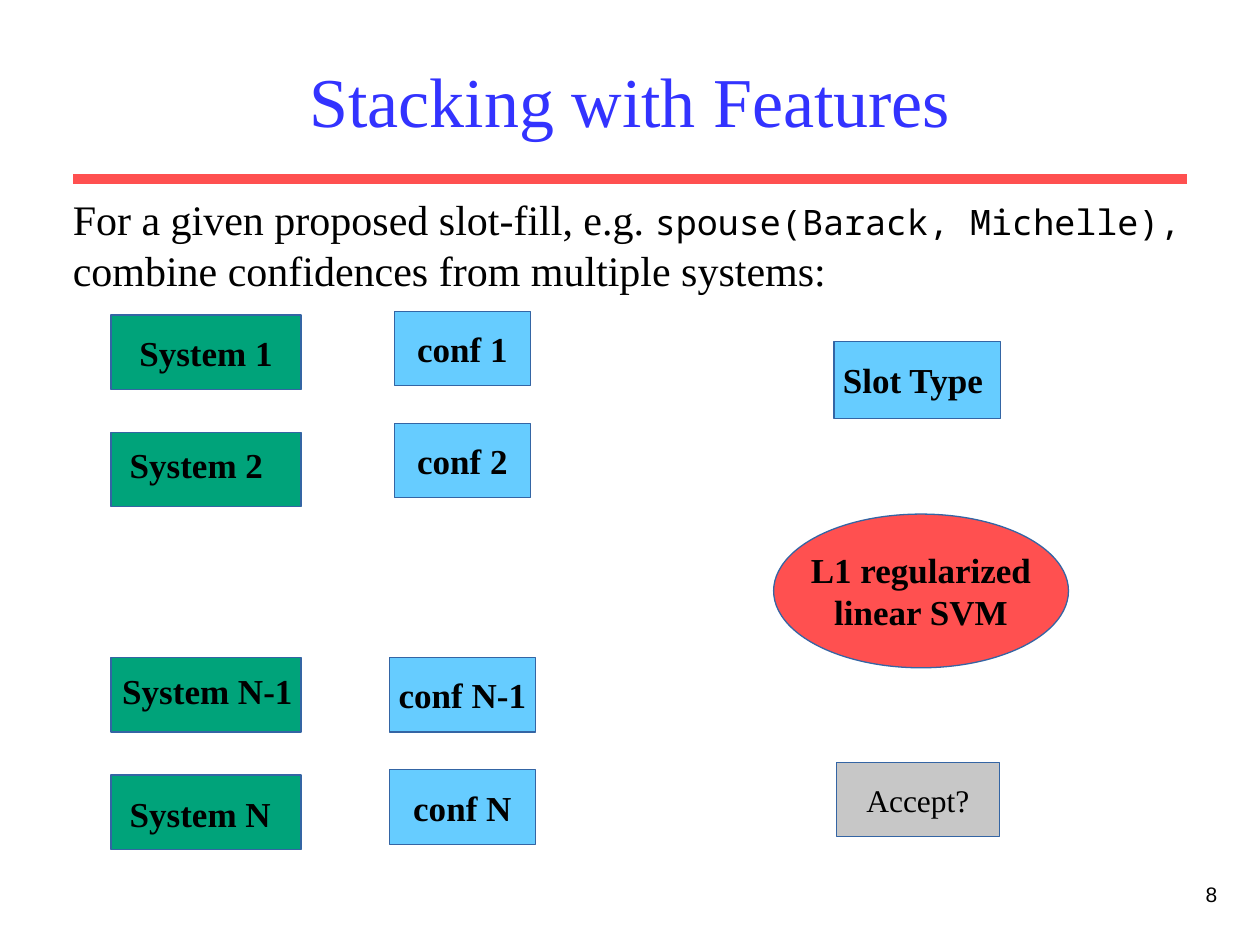
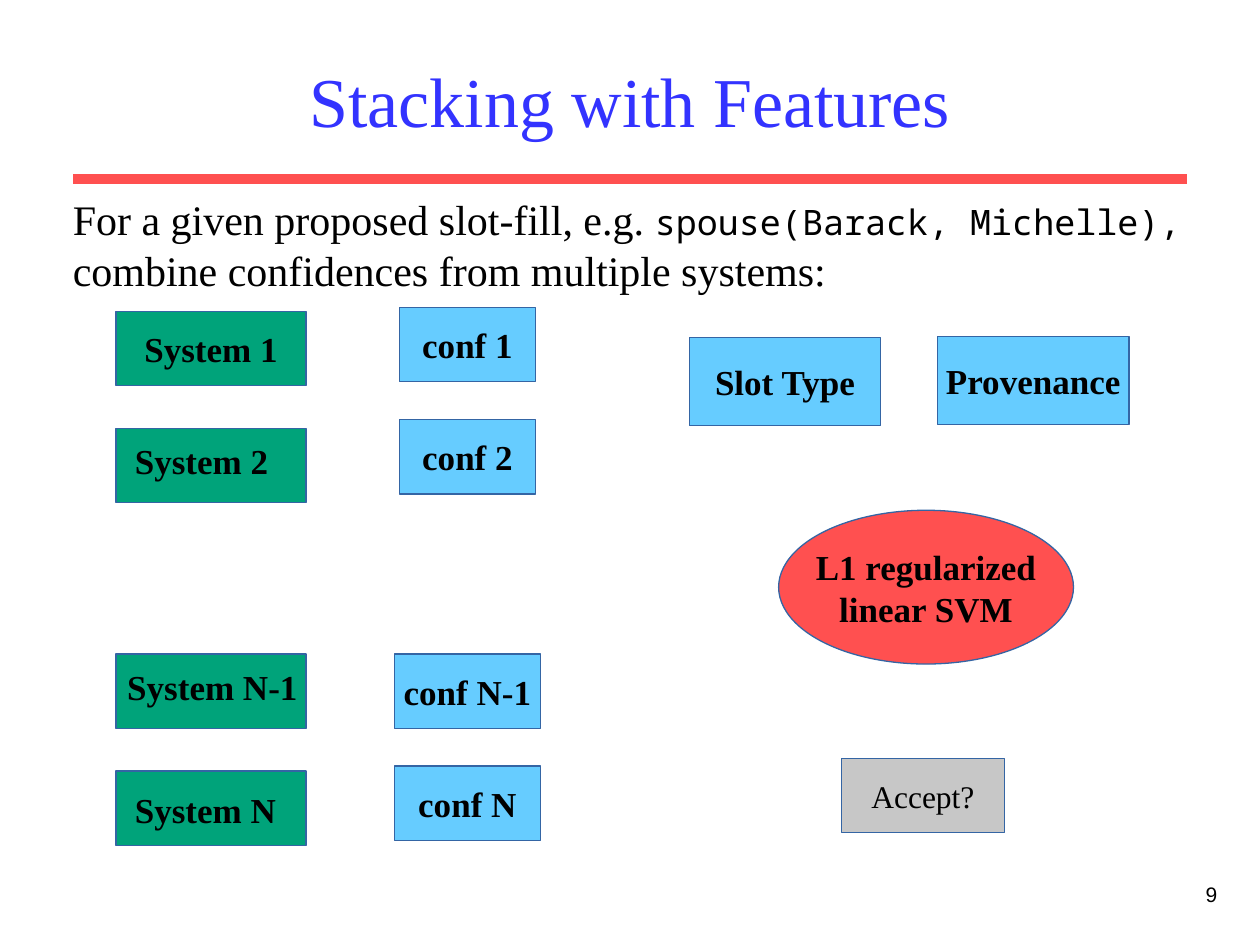
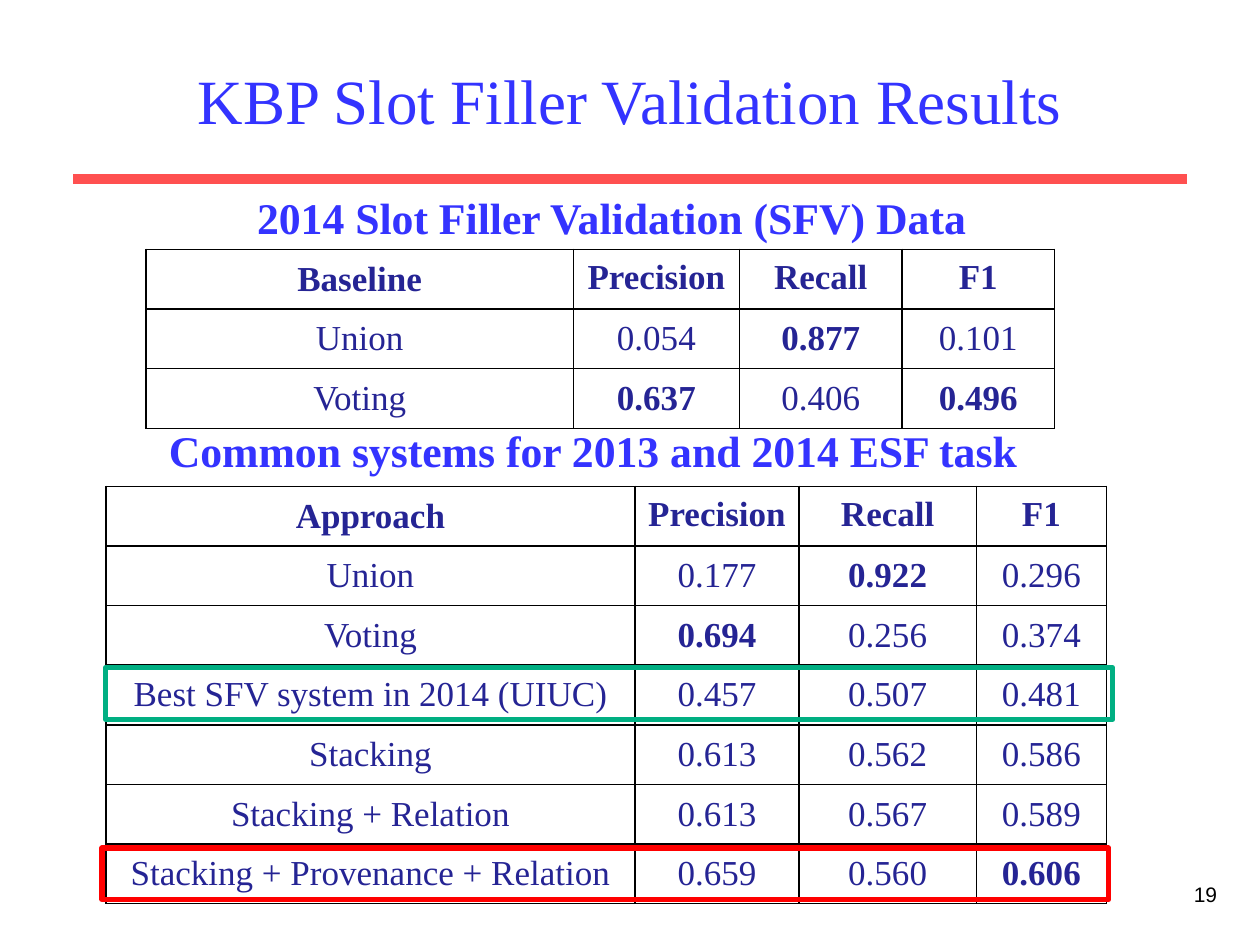
"""Builds three slides on stacking with features and slot filler validation."""
import dataclasses
import typing

import lxml.etree
import pptx
import pptx.dml.color
import pptx.enum.shapes
import pptx.enum.text
import pptx.oxml.ns
import pptx.util

Inches = pptx.util.Inches
Pt = pptx.util.Pt
ALIGN = pptx.enum.text.PP_ALIGN
ANCHOR = pptx.enum.text.MSO_ANCHOR
SHAPE = pptx.enum.shapes.MSO_SHAPE

COLORS = {
    "title": "3333FF",
    "heading": "3433FF",
    "rule": "FF5050",
    "text": "000000",
    "cell": "252494",
    "border": "000000",
    "outline": "3465A4",
    "system": "00A37A",
    "feature": "66CCFF",
    "classifier": "FF5050",
    "decision": "C7C7C7",
    "best_sfv": "00AF82",
    "best_stacking": "FF0000",
}
SERIF = "Times New Roman"
FORMATS = {
    "title": {"name": SERIF, "size": Pt(40)},
    "long_title": {"name": SERIF, "size": Pt(36)},
    "heading": {"name": SERIF, "size": Pt(25), "bold": True},
    "intro": {"name": SERIF, "size": Pt(24)},
    "code": {"name": "Noto Sans Mono", "size": Pt(20)},
    "label": {"name": SERIF, "size": Pt(20), "bold": True},
    "decision": {"name": SERIF, "size": Pt(18)},
    "number": {"name": "Arial", "size": Pt(12)},
    "cell": {"name": SERIF, "size": Pt(20), "bold": False},
    "strong_cell": {"name": SERIF, "size": Pt(20), "bold": True},
}
MARGINS = ("margin_left", "margin_top", "margin_right", "margin_bottom")


@dataclasses.dataclass
class Text:
    left: float
    top: float
    width: float
    height: float
    text: str
    fmt: str
    color: str = "text"
    align: typing.Any = ALIGN.LEFT
    anchor: typing.Any = ANCHOR.TOP


@dataclasses.dataclass
class Box:
    left: float
    top: float
    width: float
    height: float
    fill: str
    text: str = ""
    fmt: str = "label"
    shape: typing.Any = SHAPE.RECTANGLE
    align: typing.Any = ALIGN.CENTER
    inset: float = 0
    wrap: bool = True


@dataclasses.dataclass
class Results:
    left: float
    top: float
    height: float
    widths: tuple[float, ...]
    rows: list[tuple[str, ...]]


def set_all(obj: typing.Any, values: dict[str, typing.Any]) -> None:
    for name, value in values.items():
        setattr(obj, name, value)


def rgb(color: str) -> pptx.dml.color.RGBColor:
    return pptx.dml.color.RGBColor.from_string(COLORS[color])


def add_run(p: typing.Any, text: str, fmt: str, color: str = "text") -> None:
    r = p.add_run()
    r.text = text
    set_all(r.font, FORMATS[fmt])
    r.font.color.rgb = rgb(color)


def place(item: typing.Any, dx: float = 0, dy: float = 0) -> list[int]:
    return [Inches(v) for v in (item.left + dx, item.top + dy, item.width, item.height)]


def add_text(s: typing.Any, item: Text) -> None:
    tf = s.shapes.add_textbox(*place(item)).text_frame
    set_all(tf, dict.fromkeys(MARGINS, 0) | {"word_wrap": True, "vertical_anchor": item.anchor})
    p = tf.paragraphs[0]
    p.alignment = item.align
    add_run(p, item.text, item.fmt, item.color)


def add_box(s: typing.Any, box: Box, dx: float = 0, dy: float = 0) -> None:
    sp = s.shapes.add_shape(box.shape, *place(box, dx, dy))
    sp.shadow.inherit = False
    sp.fill.solid()
    sp.fill.fore_color.rgb = rgb(box.fill)
    sp.line.color.rgb = rgb("outline")
    sp.line.width = Pt(0.75)
    if box.text:
        tf = sp.text_frame
        set_all(tf, dict.fromkeys(MARGINS, 0) | {"word_wrap": box.wrap, "vertical_anchor": ANCHOR.MIDDLE})
        tf.margin_left = Inches(box.inset)
        p = tf.paragraphs[0]
        p.alignment = box.align
        for i, line in enumerate(box.text.split("\n")):
            if i:
                p.add_line_break()
            add_run(p, line, box.fmt)


def add_frame(s: typing.Any, left: float, top: float, color: str) -> None:
    sp = s.shapes.add_shape(SHAPE.RECTANGLE, Inches(left), Inches(top), Inches(7.99), Inches(0.41))
    sp.shadow.inherit = False
    sp.fill.background()
    sp.line.color.rgb = rgb(color)
    sp.line.width = Pt(3)


def add_borders(cell: typing.Any) -> None:
    qn = pptx.oxml.ns.qn
    tc_pr = cell._tc.get_or_add_tcPr()
    for side in ("a:lnL", "a:lnR", "a:lnT", "a:lnB"):
        ln = lxml.etree.SubElement(tc_pr, qn(side), w=str(Pt(1)))
        fill = lxml.etree.SubElement(ln, qn("a:solidFill"))
        lxml.etree.SubElement(fill, qn("a:srgbClr"), val=COLORS["border"])


def add_results(s: typing.Any, res: Results) -> None:
    header, *body = res.rows
    best = [max(column) for column in zip(*body)]
    table = s.shapes.add_table(
        len(res.rows), len(header), Inches(res.left), Inches(res.top),
        Inches(sum(res.widths)), Inches(res.height)).table
    set_all(table, {"first_row": False, "horz_banding": False})
    for column, width in zip(table.columns, res.widths):
        column.width = Inches(width)
    for i, row in enumerate(res.rows):
        for j, value in enumerate(row):
            cell = table.cell(i, j)
            add_borders(cell)
            cell.fill.background()
            set_all(cell, dict.fromkeys(MARGINS, Inches(0.07)))
            cell.vertical_anchor = ANCHOR.TOP if i == 0 and j else ANCHOR.MIDDLE
            p = cell.text_frame.paragraphs[0]
            set_all(p, {"alignment": ALIGN.CENTER, "space_before": Pt(5)})
            strong = i == 0 or (j > 0 and value == best[j])
            add_run(p, value, "strong_cell" if strong else "cell", "cell")


def add_base(prs: typing.Any, title: str, number: int, fmt: str = "title") -> typing.Any:
    s = prs.slides.add_slide(prs.slide_layouts[6])
    y = Inches(1.42)
    line = s.shapes.add_connector(
        pptx.enum.shapes.MSO_CONNECTOR.STRAIGHT, Inches(0.58), y, Inches(9.42), y)
    line.line.color.rgb = rgb("rule")
    line.line.width = Pt(6)
    lxml.etree.SubElement(line._element.spPr, pptx.oxml.ns.qn("a:effectLst"))
    add_text(s, Text(0.75, 0.25, 8.5, 1.08, title, fmt, "title", ALIGN.CENTER, ANCHOR.MIDDLE))
    add_text(s, Text(7.58, 7, 2.08, 0.5, str(number), "number", align=ALIGN.RIGHT))
    return s


def add_intro(s: typing.Any) -> None:
    tf = s.shapes.add_textbox(Inches(0.48), Inches(1.49), Inches(9.07), Inches(0.91)).text_frame
    tf.word_wrap = True
    p = tf.paragraphs[0]
    add_run(p, "For a given proposed slot-fill, e.g. ", "intro")
    add_run(p, "spouse(Barack, Michelle),", "code")
    add_run(tf.add_paragraph(), "combine confidences from multiple systems:", "intro")


def system_box(name: str, top: float, inset: float, rise: float = 0) -> list[Box]:
    return [Box(0.88, top, 1.51, 0.59, "system", name, align=ALIGN.LEFT, inset=inset)]


SYSTEM_LABELS = [
    Text(1.03, 3.52, 1.17, 0.41, "System 2", "label"),
    Text(0.97, 5.31, 1.39, 0.34, "System N-1", "label"),
    Text(1.03, 6.25, 1.23, 0.41, "System N", "label", anchor=ANCHOR.MIDDLE),
]
ENSEMBLE = [
    Box(0.88, 2.5, 1.51, 0.59, "system", "System 1"),
    *[Box(0.88, top, 1.51, 0.59, "system") for top in (3.43, 5.22, 6.15)],
    *[Box(3.13, top, 1.08, 0.59, "feature", text)
      for top, text in ((2.47, "conf 1"), (3.36, "conf 2"))],
    *[Box(3.09, top, 1.16, 0.59, "feature", text)
      for top, text in ((5.22, "conf N-1"), (6.11, "conf N"))],
    Box(6.14, 4.08, 2.34, 1.22, "classifier", "L1 regularized\nlinear SVM", shape=SHAPE.OVAL, wrap=False),
    Box(6.64, 6.05, 1.29, 0.59, "decision", "Accept?", "decision"),
]
RELATION = [Box(6.62, 2.71, 1.32, 0.61, "feature", "Slot Type", align=ALIGN.LEFT, inset=0.07)]
RELATION_AND_PROVENANCE = [
    Box(5.47, 2.68, 1.52, 0.7, "feature", "Slot Type"),
    Box(7.44, 2.67, 1.52, 0.7, "feature", "Provenance"),
]
SFV_RESULTS = Results(1.16, 1.98, 1.42, (3.39, 1.32, 1.29, 1.21), [
    ("Baseline", "Precision", "Recall", "F1"),
    ("Union", "0.054", "0.877", "0.101"),
    ("Voting", "0.637", "0.406", "0.496"),
])
ESF_RESULTS = Results(0.84, 3.86, 3.31, (4.2, 1.3, 1.41, 1.03), [
    ("Approach", "Precision", "Recall", "F1"),
    ("Union", "0.177", "0.922", "0.296"),
    ("Voting", "0.694", "0.256", "0.374"),
    ("Best SFV system in 2014 (UIUC)", "0.457", "0.507", "0.481"),
    ("Stacking", "0.613", "0.562", "0.586"),
    ("Stacking + Relation", "0.613", "0.567", "0.589"),
    ("Stacking + Provenance + Relation", "0.659", "0.560", "0.606"),
])


def add_stacking(prs: typing.Any, number: int, features: list[Box], dx: float = 0, dy: float = 0) -> None:
    s = add_base(prs, "Stacking with Features", number)
    for box in ENSEMBLE:
        add_box(s, box, dx, dy)
    for label in SYSTEM_LABELS:
        add_text(s, dataclasses.replace(label, left=label.left + dx, top=label.top + dy))
    for box in features:
        add_box(s, box)
    add_intro(s)


def add_validation(prs: typing.Any, number: int) -> None:
    s = add_base(prs, "KBP Slot Filler Validation Results", number, "long_title")
    for left, top, width, text in (
            (2.04, 1.48, 5.75, "2014 Slot Filler Validation (SFV) Data"),
            (1.34, 3.33, 6.86, "Common systems for 2013 and 2014 ESF task")):
        add_text(s, Text(left, top, width, 0.48, text, "heading", "heading", anchor=ANCHOR.MIDDLE))
    for res in (SFV_RESULTS, ESF_RESULTS):
        add_results(s, res)
    add_frame(s, 0.84, 5.3, "best_sfv")
    add_frame(s, 0.81, 6.73, "best_stacking")


def main() -> None:
    prs = pptx.Presentation()
    set_all(prs, {"slide_width": Inches(10), "slide_height": Inches(7.5)})
    add_stacking(prs, 8, RELATION)
    add_stacking(prs, 9, RELATION_AND_PROVENANCE, 0.04, -0.03)
    add_validation(prs, 19)
    prs.save("out.pptx")


if __name__ == "__main__":
    main()
